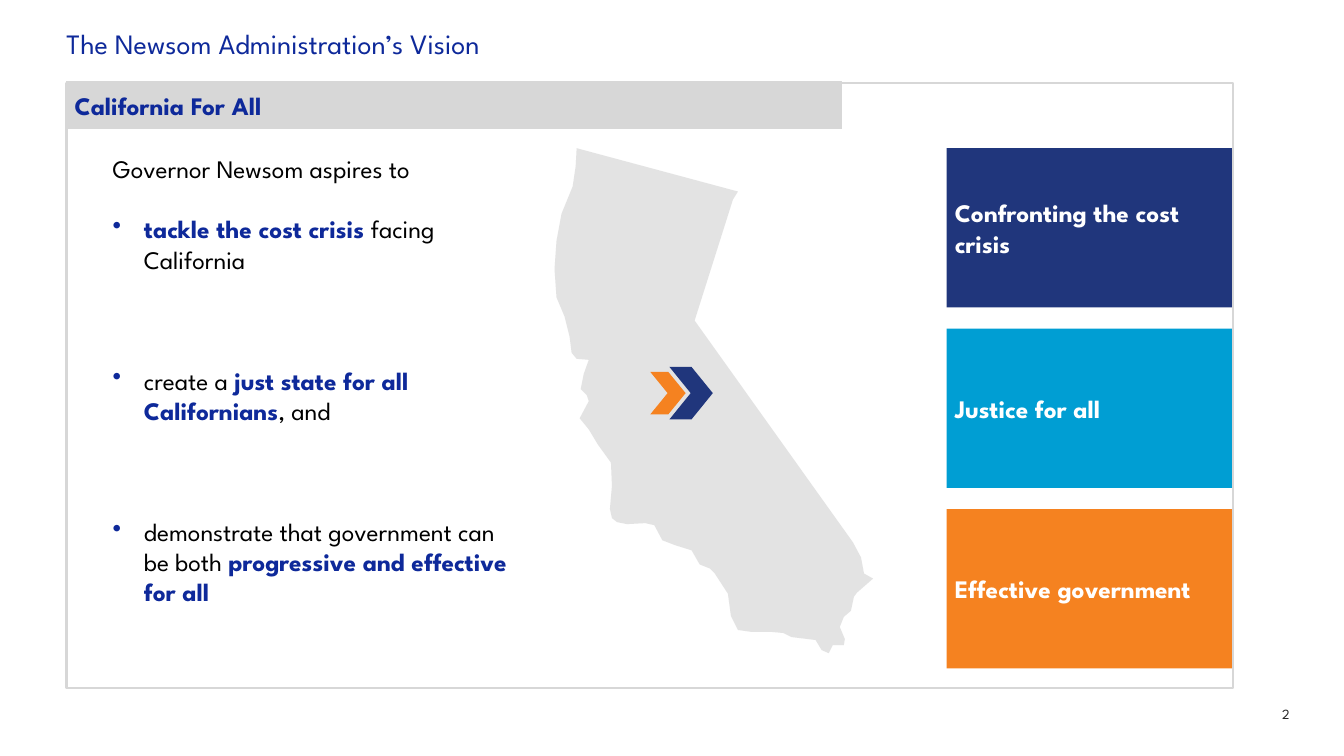
from dataclasses import dataclass

from lxml.etree import SubElement
from pptx import Presentation
from pptx.dml.color import RGBColor
from pptx.enum.shapes import MSO_SHAPE as Preset
from pptx.enum.text import MSO_ANCHOR as Anchor, PP_ALIGN as Align
from pptx.oxml.ns import qn
from pptx.util import Inches, Pt


@dataclass(frozen=True)
class Theme:
    font: str = "League Spartan"
    accent: str = "0E299A"
    navy: str = "20367C"
    sky: str = "009ED3"
    orange: str = "F58220"
    grey: str = "D7D7D7"
    white: str = "FFFFFF"
    black: str = "000000"
    number: str = "262626"
    title_size: int = 20
    body_size: int = 18
    number_size: int = 10


THEME = Theme()

COAST_AND_BORDER = [
    (5.84, 3.98), (5.75, 4.15), (5.84, 4.26), (5.93, 4.41), (6.06, 4.59),
    (6.07, 4.82), (6.05, 5.05), (6.07, 5.14), (6.12, 5.18), (6.22, 5.2),
    (6.4, 5.19), (6.49, 5.21), (6.57, 5.36), (6.7, 5.41), (6.86, 5.46),
    (6.94, 5.6), (7.04, 5.64), (7.09, 5.69), (7.22, 5.89), (7.25, 6.11),
    (7.32, 6.25), (7.46, 6.27), (7.66, 6.27), (7.77, 6.28), (7.85, 6.32),
    (8.09, 6.35), (8.15, 6.45), (8.22, 6.48), (8.26, 6.4), (8.37, 6.4),
    (8.38, 6.34), (8.33, 6.22), (8.37, 6.12), (8.44, 6.06), (8.47, 5.92),
    (8.5, 5.88), (8.66, 5.74), (8.57, 5.69), (8.54, 5.53), (8.46, 5.38),
    (6.89, 3.18), (7.27, 1.98), (7.32, 1.9), (5.72, 1.47), (5.71, 1.65),
    (5.68, 1.85), (5.57, 2.12), (5.52, 2.39), (5.5, 2.67), (5.52, 2.95),
    (5.6, 3.14), (5.65, 3.34), (5.67, 3.5), (5.72, 3.56), (5.84, 3.57),
    (5.79, 3.71), (5.76, 3.86), (5.82, 3.92),
]

GOALS = [
    (21.6, [("tackle the cost crisis ", True), ("facing California", False)]),
    (64.8, [("create a ", False), ("just state for all Californians", True),
            (", and", False)]),
    (64.8, [("demonstrate that government can be both ", False),
            ("progressive and effective for all", True)]),
]


def colour(code):
    return RGBColor.from_string(code)


def box(left, top, width, height):
    return [Inches(value) for value in (left, top, width, height)]


def paint(shape, fill=None, line=None, weight=0.75):
    shape.shadow.inherit = False
    if fill:
        shape.fill.solid()
        shape.fill.fore_color.rgb = colour(fill)
    else:
        shape.fill.background()
    if line:
        shape.line.color.rgb = colour(line)
        shape.line.width = Pt(weight)
    else:
        shape.line.fill.background()
    return shape


def write(paragraph, words, size, code, bold=False):
    run = paragraph.add_run()
    run.text = words
    run.font.color.rgb = colour(code)
    for name, value in {"name": THEME.font, "size": Pt(size), "bold": bold}.items():
        setattr(run.font, name, value)


def set_frame(frame, inset_x, inset_y, anchor=Anchor.TOP):
    settings = {
        "word_wrap": True, "vertical_anchor": anchor,
        "margin_left": Inches(inset_x), "margin_right": Inches(inset_x),
        "margin_top": Inches(inset_y), "margin_bottom": Inches(inset_y),
    }
    for name, value in settings.items():
        setattr(frame, name, value)
    return frame.paragraphs[0]


def add_text(slide, place, words, size, code, inset=(0.1, 0.05), align=Align.LEFT):
    frame = slide.shapes.add_textbox(*box(*place)).text_frame
    first = set_frame(frame, *inset)
    first.alignment = align
    write(first, words, size, code)
    return frame


def add_panel(slide, place, words, fill, code, line=None):
    panel = paint(slide.shapes.add_shape(Preset.RECTANGLE, *box(*place)), fill, line)
    label = set_frame(panel.text_frame, 0.08, 0.08, Anchor.MIDDLE)
    label.alignment = Align.LEFT
    write(label, words, THEME.body_size, code, bold=True)


def add_bullet(frame, space_before, parts):
    goal = frame.add_paragraph()
    goal.space_before = Pt(space_before)
    properties = goal._p.get_or_add_pPr()
    properties.set("marL", str(Inches(0.31)))
    properties.set("indent", str(-Inches(0.31)))
    bullet_colour = SubElement(properties, qn("a:buClr"))
    SubElement(bullet_colour, qn("a:srgbClr"), val=THEME.accent)
    SubElement(properties, qn("a:buChar"), char="•")
    for words, strong in parts:
        write(goal, words, THEME.body_size, THEME.accent if strong else THEME.black, strong)


def add_state(slide):
    points = [(Inches(x), Inches(y)) for x, y in COAST_AND_BORDER]
    outline = slide.shapes.build_freeform(*points[0])
    outline.add_line_segments(points[1:], close=True)
    state = paint(outline.convert_to_shape(), THEME.grey)
    solid = state.fill._xPr.find(qn("a:solidFill"))
    SubElement(solid[0], qn("a:alpha"), val="69000")


def add_chevron(slide, place, fill):
    chevron = paint(slide.shapes.add_shape(Preset.CHEVRON, *box(*place)), fill)
    chevron.adjustments[0] = 0.49


def main():
    deck = Presentation()
    deck.slide_width, deck.slide_height = Inches(13.33), Inches(7.5)
    slide = deck.slides.add_slide(deck.slide_layouts[6])

    add_text(slide, (0.66, 0.26, 10.76, 0.34), "The Newsom Administration’s Vision",
             THEME.title_size, THEME.accent, inset=(0, 0))

    add_state(slide)
    add_chevron(slide, (6.45, 3.69, 0.35, 0.42), THEME.orange)
    add_chevron(slide, (6.64, 3.64, 0.43, 0.52), THEME.navy)

    priorities = [("Confronting the cost crisis", THEME.navy),
                  ("Justice for all", THEME.sky),
                  ("Effective government", THEME.orange)]
    for row, (words, fill) in enumerate(priorities):
        add_panel(slide, (9.39, 1.47 + 1.79 * row, 2.83, 1.58), words, fill, THEME.white)

    border = slide.shapes.add_shape(Preset.RECTANGLE, *box(0.66, 0.82, 11.57, 6.01))
    paint(border, line=THEME.grey, weight=1.5)
    add_panel(slide, (0.66, 0.81, 7.69, 0.47), "California For All",
              THEME.grey, THEME.accent, line=THEME.grey)

    vision = add_text(slide, (1.02, 1.47, 4.14, 4.95), "Governor Newsom aspires to",
                      THEME.body_size, THEME.black)
    for space_before, parts in GOALS:
        add_bullet(vision, space_before, parts)

    add_text(slide, (9.42, 6.95, 3.47, 0.4), "2", THEME.number_size, THEME.number,
             align=Align.RIGHT)
    deck.save("out.pptx")


if __name__ == "__main__":
    main()
